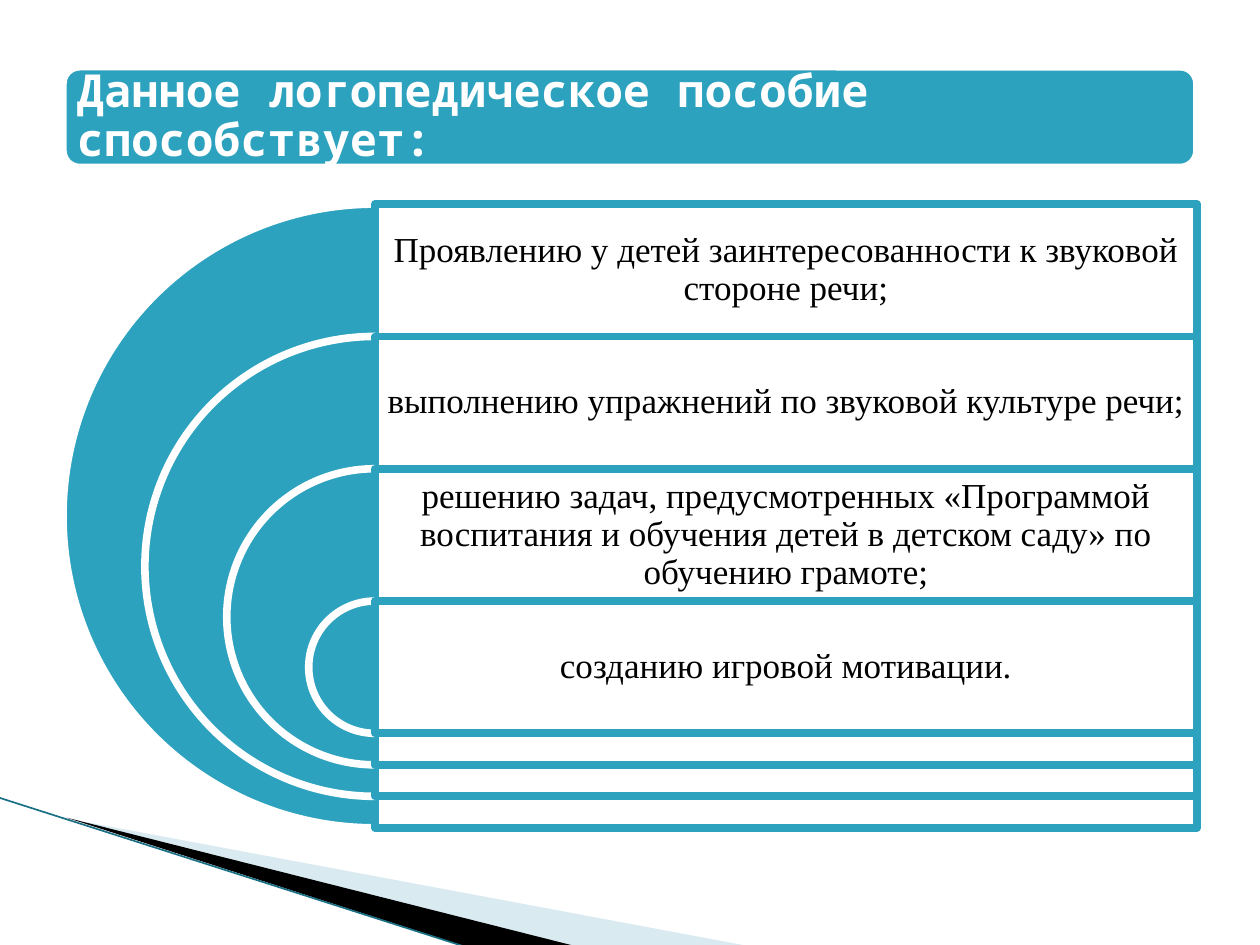
from lxml import etree
from pptx import Presentation
from pptx.dml.color import RGBColor
from pptx.enum import shapes, text
from pptx.oxml.ns import qn
from pptx.util import Inches, Pt

TEAL = RGBColor(0x2D, 0xA2, 0xBF)
DARK_TEAL = RGBColor(0x1B, 0x6F, 0x84)
PALE_BLUE = RGBColor(0xA0, 0xCB, 0xDC)
WHITE = RGBColor(0xFF, 0xFF, 0xFF)
BLACK = RGBColor(0, 0, 0)

TITLE = "Данное логопедическое пособие способствует:"
BENEFITS = [
    "Проявлению у детей заинтересованности к звуковой стороне речи;",
    "выполнению упражнений по звуковой культуре речи;",
    "решению задач, предусмотренных «Программой воспитания и обучения "
    "детей в детском саду» по обучению грамоте;",
    "созданию игровой мотивации.",
]
TITLE_FORMAT = {"name": "Noto Sans Mono", "size": Pt(26), "bold": True}
BENEFIT_FORMAT = {"name": "Times New Roman", "size": Pt(20), "bold": False}


def paint(shape, fill, line=None, alpha=None):
    """Set fill, outline and opacity (percent), without a shadow."""
    shape.shadow.inherit = False
    shape.fill.solid()
    shape.fill.fore_color.rgb = fill
    if alpha is not None:
        color = shape._element.spPr.find(qn("a:solidFill"))[0]
        etree.SubElement(color, qn("a:alpha"), val=str(alpha * 1000))
    if line is None:
        shape.line.fill.background()
    else:
        shape.line.color.rgb = line
        shape.line.width = Pt(4.33)


def add_box(slide, kind, box, fill, line, alpha=None):
    shape = slide.shapes.add_shape(kind, *map(Inches, box))
    paint(shape, fill, line, alpha)
    return shape


def write(shape, wording, font_format, color, alignment, margin):
    frame = shape.text_frame
    frame.word_wrap = True
    frame.auto_size = text.MSO_AUTO_SIZE.NONE
    frame.vertical_anchor = text.MSO_ANCHOR.MIDDLE
    for side in ("left", "right", "top", "bottom"):
        setattr(frame, f"margin_{side}", Inches(margin))
    frame.text = wording
    paragraph = frame.paragraphs[0]
    paragraph.alignment = alignment
    paragraph.line_spacing = 0.9
    for name, value in font_format.items():
        setattr(paragraph.font, name, value)
    paragraph.font.color.rgb = color


def add_corner_decoration(slide):
    """Two wedges and a thin line in the bottom left corner."""
    wedges = [
        ([(0.55, 6.5), (5.95, 7.51), (4.56, 7.51)], PALE_BLUE, 40),
        ([(0.53, 6.49), (4.57, 7.51), (3.72, 7.52)], BLACK, None),
    ]
    for points, color, alpha in wedges:
        start, *others = [(Inches(x), Inches(y)) for x, y in points]
        builder = slide.shapes.build_freeform(*start)
        builder.add_line_segments(others, close=True)
        paint(builder.convert_to_shape(), color, alpha=alpha)

    edge = slide.shapes.add_connector(
        shapes.MSO_CONNECTOR.STRAIGHT,
        Inches(-0.01), Inches(6.33), Inches(3.71), Inches(7.52))
    edge.line.color.rgb = DARK_TEAL
    edge.line.width = Pt(0.95)
    etree.SubElement(edge._element.spPr, qn("a:effectLst"))


def add_nested_list(slide, left, top, width, height):
    """Nested half circles, each with a box to its right and a text row."""
    row_height = 1.05
    shrink = 1.3
    center = left + height / 2
    box_width = left + width - center
    for index, benefit in enumerate(BENEFITS):
        size = height - index * shrink
        row_top = top + index * row_height
        pie = add_box(slide, shapes.MSO_SHAPE.PIE,
                      (center - size / 2, row_top, size, size), TEAL, WHITE)
        pie.adjustments[0] = 54  # 90 degrees
        pie.adjustments[1] = 162  # 270 degrees
        add_box(slide, shapes.MSO_SHAPE.RECTANGLE,
                (center, row_top, box_width, size), WHITE, TEAL, alpha=90)
        label = slide.shapes.add_textbox(
            *map(Inches, (center, row_top, box_width, row_height)))
        write(label, benefit, BENEFIT_FORMAT, BLACK, text.PP_ALIGN.CENTER, 0.08)


def add_title_band(slide, *box):
    add_box(slide, shapes.MSO_SHAPE.ROUNDED_RECTANGLE, box, TEAL, WHITE)
    title = slide.shapes.title
    title.left, title.top, title.width, title.height = map(Inches, box)
    write(title, TITLE, TITLE_FORMAT, WHITE, text.PP_ALIGN.LEFT, 0.11)
    # Bring the title in front of its band
    slide.shapes._spTree.append(title._element)


def main():
    presentation = Presentation()
    presentation.slide_width = Inches(10)
    presentation.slide_height = Inches(7.5)
    slide = presentation.slides.add_slide(presentation.slide_layouts[5])
    add_corner_decoration(slide)
    add_nested_list(slide, 0.5, 1.62, 9, 4.95)
    add_title_band(slide, 0.5, 0.53, 9, 0.8)
    presentation.save("out.pptx")


if __name__ == "__main__":
    main()
